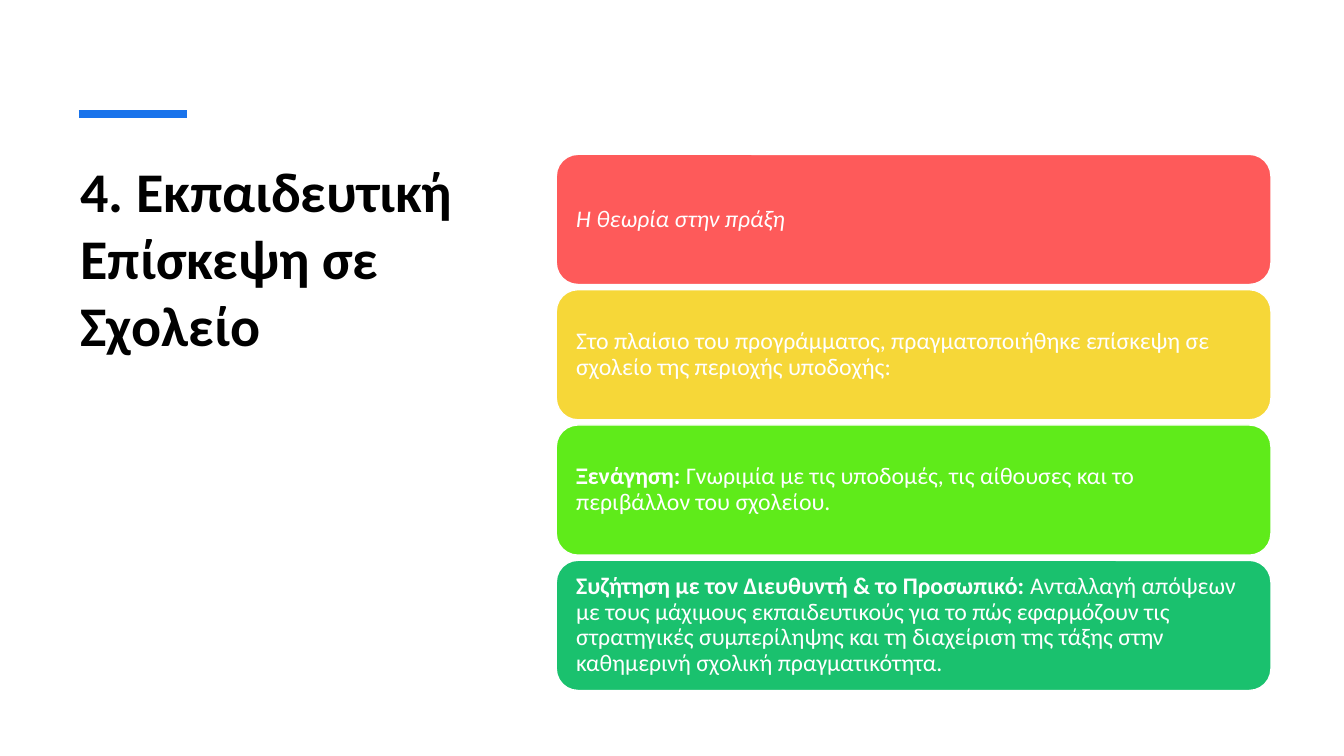
import pptx
import pptx.util
import pptx.dml.color
import pptx.enum.shapes
import pptx.enum.text
import pptx.oxml.ns
import lxml.etree

Cm = pptx.util.Cm
Pt = pptx.util.Pt
RGBColor = pptx.dml.color.RGBColor

BLACK = RGBColor(0x00, 0x00, 0x00)
WHITE = RGBColor(0xFF, 0xFF, 0xFF)
BLUE = RGBColor(0x19, 0x73, 0xEB)
RED = RGBColor(0xFE, 0x5A, 0x5A)
YELLOW = RGBColor(0xF6, 0xD7, 0x38)
LIME = RGBColor(0x5F, 0xEB, 0x1A)
GREEN = RGBColor(0x1A, 0xC1, 0x6E)

CARD_LEFT, CARD_TOP = 14.02, 3.89
CARD_WIDTH, CARD_HEIGHT = 18.01, 3.28
CARD_PITCH = 3.41
CARD_INSET = Cm(0.34)


def add_run(paragraph, text, size, color, bold=False, italic=False):
    run = paragraph.add_run()
    run.text = text
    run.font.name = "Calibri"
    run.font.size = Pt(size)
    run.font.bold = bold
    run.font.italic = italic
    run.font.color.rgb = color


presentation = pptx.Presentation()
presentation.slide_width = Cm(33.87)
presentation.slide_height = Cm(19.05)
slide = presentation.slides.add_slide(presentation.slide_layouts[6])

title = slide.shapes.add_textbox(Cm(1.78), Cm(3.81), Cm(10.41), Cm(10.9)).text_frame
title.word_wrap = True
add_run(title.paragraphs[0], "4. Εκπαιδευτική Επίσκεψη σε Σχολείο", 40, BLACK, bold=True)

accent = slide.shapes.add_connector(
    pptx.enum.shapes.MSO_CONNECTOR.STRAIGHT, Cm(1.99), Cm(2.87), Cm(4.71), Cm(2.87))
accent.line.color.rgb = BLUE
accent.line.width = Pt(6)
lxml.etree.SubElement(accent._element.spPr, pptx.oxml.ns.qn("a:effectLst"))

visit_cards = [
    (RED, "", "Η θεωρία στην πράξη", True),
    (YELLOW, "",
     "Στο πλαίσιο του προγράμματος, πραγματοποιήθηκε επίσκεψη σε σχολείο "
     "της περιοχής υποδοχής:", False),
    (LIME, "Ξενάγηση:",
     " Γνωριμία με τις υποδομές, τις αίθουσες και το περιβάλλον του σχολείου.", False),
    (GREEN, "Συζήτηση με τον Διευθυντή & το Προσωπικό:",
     " Ανταλλαγή απόψεων με τους μάχιμους εκπαιδευτικούς για το πώς εφαρμόζουν "
     "τις στρατηγικές συμπερίληψης και τη διαχείριση της τάξης στην καθημερινή "
     "σχολική πραγματικότητα.", False),
]

for position, (color, heading, description, italic) in enumerate(visit_cards):
    card = slide.shapes.add_shape(
        pptx.enum.shapes.MSO_SHAPE.ROUNDED_RECTANGLE,
        Cm(CARD_LEFT), Cm(CARD_TOP + position * CARD_PITCH),
        Cm(CARD_WIDTH), Cm(CARD_HEIGHT))
    card.shadow.inherit = False
    card.fill.solid()
    card.fill.fore_color.rgb = color
    card.line.color.rgb = WHITE
    card.line.width = Pt(1)
    content = card.text_frame
    content.word_wrap = True
    content.vertical_anchor = pptx.enum.text.MSO_ANCHOR.MIDDLE
    content.margin_left = content.margin_right = CARD_INSET
    content.margin_top = content.margin_bottom = CARD_INSET
    paragraph = content.paragraphs[0]
    paragraph.alignment = pptx.enum.text.PP_ALIGN.LEFT
    paragraph.line_spacing = 0.9
    if heading:
        add_run(paragraph, heading, 17, WHITE, bold=True)
    add_run(paragraph, description, 17, WHITE, italic=italic)

presentation.save("out.pptx")
